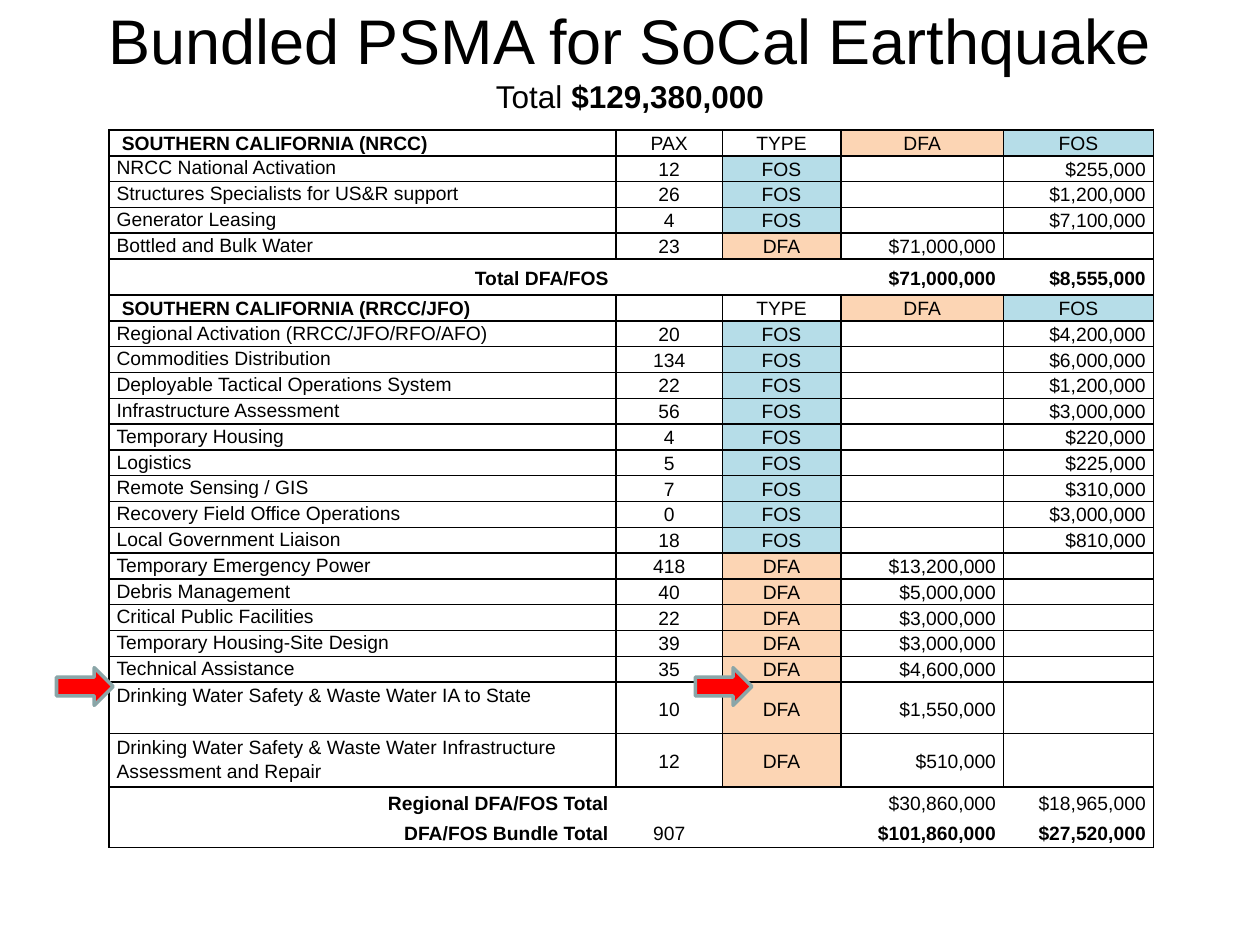
from lxml import etree
from pptx import Presentation
from pptx.dml.color import RGBColor
from pptx.enum.shapes import MSO_SHAPE
from pptx.enum.text import MSO_ANCHOR, PP_ALIGN
from pptx.oxml.ns import qn
from pptx.util import Cm, Pt

LEFT, CENTER, RIGHT = PP_ALIGN.LEFT, PP_ALIGN.CENTER, PP_ALIGN.RIGHT
TOP, MIDDLE = MSO_ANCHOR.TOP, MSO_ANCHOR.MIDDLE
RIGHT_ARROW = MSO_SHAPE.RIGHT_ARROW

FILLS = {"DFA": "FCD5B4", "FOS": "B6DDE8"}
WIDTHS = [10.22, 2.14, 2.39, 3.28, 3.02]
ROW, SUBTOTAL_ROW, TALL_ROW, TOTAL_ROW = 0.52, 0.73, 1.04, 0.61
TIGHT, LOOSE = 1.08, 1.15

NATIONAL = [
    ("NRCC National Activation", "12", "FOS", "$255,000"),
    ("Structures Specialists for US&R support", "26", "FOS", "$1,200,000"),
    ("Generator Leasing", "4", "FOS", "$7,100,000"),
    ("Bottled and Bulk Water", "23", "DFA", "$71,000,000"),
]
REGIONAL = [
    ("Regional Activation (RRCC/JFO/RFO/AFO)", "20", "FOS", "$4,200,000"),
    ("Commodities Distribution", "134", "FOS", "$6,000,000"),
    ("Deployable Tactical Operations System", "22", "FOS", "$1,200,000"),
    ("Infrastructure Assessment", "56", "FOS", "$3,000,000"),
    ("Temporary Housing", "4", "FOS", "$220,000"),
    ("Logistics", "5", "FOS", "$225,000"),
    ("Remote Sensing / GIS", "7", "FOS", "$310,000"),
    ("Recovery Field Office Operations", "0", "FOS", "$3,000,000"),
    ("Local Government Liaison", "18", "FOS", "$810,000"),
    ("Temporary Emergency Power", "418", "DFA", "$13,200,000"),
    ("Debris Management", "40", "DFA", "$5,000,000"),
    ("Critical Public Facilities", "22", "DFA", "$3,000,000"),
    ("Temporary Housing-Site Design", "39", "DFA", "$3,000,000"),
    ("Technical Assistance", "35", "DFA", "$4,600,000"),
]
WATER = [
    ("Drinking Water Safety & Waste Water IA to State", "10", "DFA", "$1,550,000"),
    ("Drinking Water Safety & Waste Water Infrastructure Assessment and Repair",
     "12", "DFA", "$510,000"),
]


def color(value):
    return RGBColor.from_string(value)


def header(title, pax):
    texts = [title, pax, "TYPE", "DFA", "FOS"]
    return dict(texts=texts, height=ROW, bold=[0], aligns=[LEFT] + [CENTER] * 4)


def items(entries, height=ROW):
    rows = []
    for name, pax, kind, amount in entries:
        amounts = [amount, ""] if kind == "DFA" else ["", amount]
        rows.append(dict(texts=[name, pax, kind] + amounts, height=height, bold=[],
                         aligns=[LEFT, CENTER, CENTER, RIGHT, RIGHT], name_anchor=TOP))
    return rows


def total(texts, height, bold, edges):
    return dict(texts=texts, height=height, bold=bold, edges=edges,
                aligns=[RIGHT, CENTER, CENTER, RIGHT, RIGHT])


class Sheet:
    font, ink = "Arial", "000000"

    def __init__(self, slide):
        self.slide = slide

    def span(self, para, text, size, bold=False):
        span = para.add_run()
        span.text = text
        span.font.name = self.font
        span.font.size = Pt(size)
        span.font.bold = bold
        span.font.color.rgb = color(self.ink)

    def heading(self, left, top, width, height, title, label, amount):
        box = self.slide.shapes.add_textbox(Cm(left), Cm(top), Cm(width), Cm(height))
        frame = box.text_frame
        frame.word_wrap = True
        frame.vertical_anchor = MIDDLE
        para = frame.paragraphs[0]
        para.alignment = CENTER
        self.span(para, title, 36)
        para.add_line_break()
        self.span(para, label, 18)
        self.span(para, amount, 18, True)

    def borders(self, cell, edges):
        properties = cell._tc.get_or_add_tcPr()
        for edge in "LRTB":
            line = etree.SubElement(properties, qn("a:ln" + edge), w=str(Pt(1)))
            if edge in edges:
                fill = etree.SubElement(line, qn("a:solidFill"))
                etree.SubElement(fill, qn("a:srgbClr"), val=self.ink)
            else:
                etree.SubElement(line, qn("a:noFill"))

    def cell(self, cell, text, align, bold, anchor, edges, spacing):
        self.borders(cell, edges)
        if text in FILLS:
            cell.fill.solid()
            cell.fill.fore_color.rgb = color(FILLS[text])
        else:
            cell.fill.background()
        cell.margin_left = cell.margin_right = Cm(0.15)
        cell.margin_top = cell.margin_bottom = Cm(0)
        cell.vertical_anchor = anchor
        para = cell.text_frame.paragraphs[0]
        para.alignment = align
        para.line_spacing = spacing
        if text:
            self.span(para, text, 11, bold)
        else:
            end = etree.SubElement(para._p, qn("a:endParaRPr"), sz="1100")
            etree.SubElement(end, qn("a:latin"), typeface=self.font)

    def table(self, left, top, rows):
        height = sum(row["height"] for row in rows)
        table = self.slide.shapes.add_table(
            len(rows), len(WIDTHS), Cm(left), Cm(top), Cm(sum(WIDTHS)), Cm(height)).table
        table.first_row = table.horz_banding = False
        for column, width in zip(table.columns, WIDTHS):
            column.width = Cm(width)
        last = len(WIDTHS) - 1
        for r, row in enumerate(rows):
            table.rows[r].height = Cm(row["height"])
            spacing = TIGHT if row["height"] == ROW else LOOSE
            for c, text in enumerate(row["texts"]):
                edges = "LRTB"
                if "edges" in row:
                    edges = row["edges"] + {0: "L", last: "R"}.get(c, "")
                anchor = row.get("name_anchor", MIDDLE) if c == 0 else MIDDLE
                self.cell(table.cell(r, c), text, row["aligns"][c],
                          c in row["bold"], anchor, edges, spacing)

    def arrow(self, left, top, width, height):
        arrow = self.slide.shapes.add_shape(
            RIGHT_ARROW, Cm(left), Cm(top), Cm(width), Cm(height))
        arrow.shadow.inherit = False
        arrow.fill.solid()
        arrow.fill.fore_color.rgb = color("FF0000")
        arrow.line.color.rgb = color("8AA6A8")
        arrow.line.width = Pt(2)


def main():
    deck = Presentation()
    deck.slide_width, deck.slide_height = Cm(25.4), Cm(19.05)
    page = Sheet(deck.slides.add_slide(deck.slide_layouts[6]))
    page.heading(1.27, 0, 22.86, 2.34,
                 "Bundled PSMA for SoCal Earthquake", "Total ", "$129,380,000")
    rows = [
        header(" SOUTHERN CALIFORNIA (NRCC)", "PAX"),
        *items(NATIONAL),
        total(["Total DFA/FOS", "", "", "$71,000,000", "$8,555,000"],
              SUBTOTAL_ROW, [0, 3, 4], "TB"),
        header(" SOUTHERN CALIFORNIA (RRCC/JFO)", ""),
        *items(REGIONAL),
        *items(WATER, TALL_ROW),
        total(["Regional DFA/FOS Total", "", "", "$30,860,000", "$18,965,000"],
              TOTAL_ROW, [0], "T"),
        total(["DFA/FOS Bundle Total", "907", "", "$101,860,000", "$27,520,000"],
              TOTAL_ROW, [0, 3, 4], "B"),
    ]
    page.table(2.2, 2.62, rows)
    for left in (14.02, 1.14):
        page.arrow(left, 13.46, 1.14, 0.76)
    deck.save("out.pptx")


if __name__ == "__main__":
    main()
